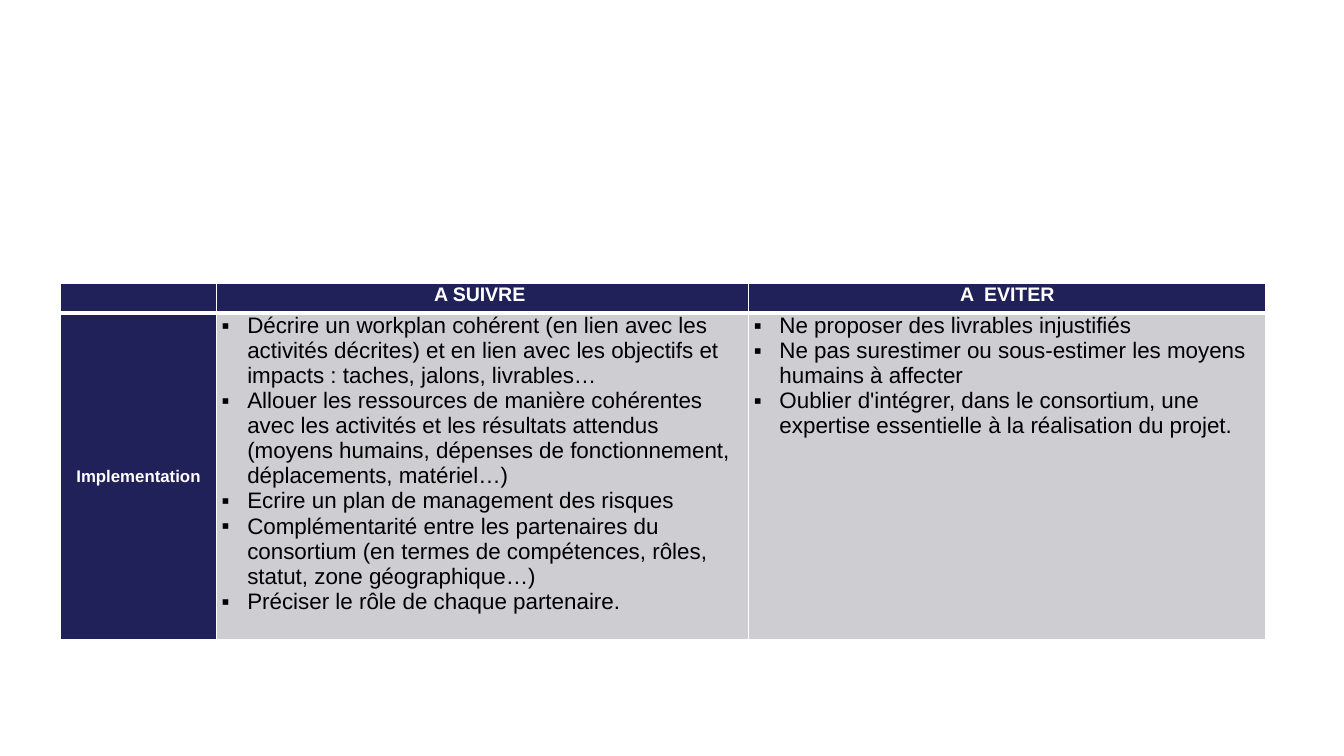
from lxml.etree import SubElement
from pptx import Presentation
from pptx.dml.color import RGBColor
from pptx.enum.text import MSO_ANCHOR as Anchor, PP_ALIGN as Align
from pptx.oxml.ns import qn
from pptx.util import Inches, Pt

WIDTH = 10
HEIGHT = WIDTH * 9 / 16
NAVY, GREY, WHITE, BLACK = "21215A", "CDCDD2", "FFFFFF", "000000"
COLUMN_WIDTHS = (1.16, 3.96, 3.85)
ROW_HEIGHTS = (0.22, 2.43)
INDENT = 0.19

HEADINGS = ("", "A SUIVRE ", "A  EVITER")
TOPIC = "Implementation"
TO_FOLLOW = (
    "Décrire un workplan cohérent (en lien avec les activités décrites) et en lien "
    "avec les objectifs et impacts : taches, jalons, livrables…",
    "Allouer les ressources de manière cohérentes avec les activités et les résultats "
    "attendus (moyens humains, dépenses de fonctionnement, déplacements, matériel…)",
    "Ecrire un plan de management des risques",
    "Complémentarité entre les partenaires du consortium (en termes de compétences, "
    "rôles, statut, zone géographique…)",
    "Préciser le rôle de chaque partenaire. ",
)
TO_AVOID = (
    "Ne proposer des livrables injustifiés",
    "Ne pas surestimer ou sous-estimer les moyens humains à affecter",
    "Oublier d'intégrer, dans le consortium, une expertise essentielle à la "
    "réalisation du projet. ",
)


def color(value):
    return RGBColor.from_string(value)


def add_bullet(paragraph):
    properties = paragraph._p.get_or_add_pPr()
    properties.set("marL", str(Inches(INDENT)))
    properties.set("indent", str(-Inches(INDENT)))
    SubElement(properties, qn("a:buFont"), typeface="Arial")
    SubElement(properties, qn("a:buChar"), char="▪")


def write(frame, *texts, size, ink=WHITE, bold=True, align=Align.CENTER, bullet=False):
    for index, text in enumerate(texts):
        paragraph = frame.add_paragraph() if index else frame.paragraphs[0]
        paragraph.alignment = align
        if bullet:
            add_bullet(paragraph)
        if not text:
            # The size of an empty paragraph keeps its row from growing
            SubElement(paragraph._p, qn("a:endParaRPr"), sz=str(int(size * 100)))
            continue
        run = paragraph.add_run()
        run.text = text
        font = run.font
        font.name, font.size, font.bold = "Arial", Pt(size), bold
        font.color.rgb = color(ink)


def style_cell(cell, fill, top=1, bottom=1, anchor=Anchor.TOP):
    cell.margin_left = cell.margin_right = Inches(0.04)
    cell.margin_top = cell.margin_bottom = 0
    cell.vertical_anchor = anchor
    properties = cell._tc.get_or_add_tcPr()
    for side, width in {"L": 1, "R": 1, "T": top, "B": bottom}.items():
        line = SubElement(properties, qn(f"a:ln{side}"), w=str(Pt(width)))
        SubElement(SubElement(line, qn("a:solidFill")), qn("a:srgbClr"), val=WHITE)
    cell.fill.solid()
    cell.fill.fore_color.rgb = color(fill)


def add_advice_table(slide, left, top):
    box = (left, top, sum(COLUMN_WIDTHS), sum(ROW_HEIGHTS))
    table = slide.shapes.add_table(
        len(ROW_HEIGHTS), len(COLUMN_WIDTHS), *map(Inches, box)).table
    for column, width in zip(table.columns, COLUMN_WIDTHS):
        column.width = Inches(width)
    for row, height in zip(table.rows, ROW_HEIGHTS):
        row.height = Inches(height)

    for index, heading in enumerate(HEADINGS):
        cell = table.cell(0, index)
        style_cell(cell, NAVY, bottom=3)
        write(cell.text_frame, heading, size=10.5)

    topic_cell = table.cell(1, 0)
    style_cell(topic_cell, NAVY, top=3, anchor=Anchor.MIDDLE)
    write(topic_cell.text_frame, TOPIC, size=9)

    for index, advice in enumerate((TO_FOLLOW, TO_AVOID), start=1):
        cell = table.cell(1, index)
        style_cell(cell, GREY, top=3)
        write(cell.text_frame, *advice, size=12, ink=BLACK, bold=False,
              align=Align.LEFT, bullet=True)


def main():
    deck = Presentation()
    deck.slide_width, deck.slide_height = Inches(WIDTH), Inches(HEIGHT)
    slide = deck.slides.add_slide(deck.slide_layouts[6])
    add_advice_table(slide, left=0.045 * WIDTH, top=0.375 * HEIGHT)
    deck.save("out.pptx")


if __name__ == "__main__":
    main()
